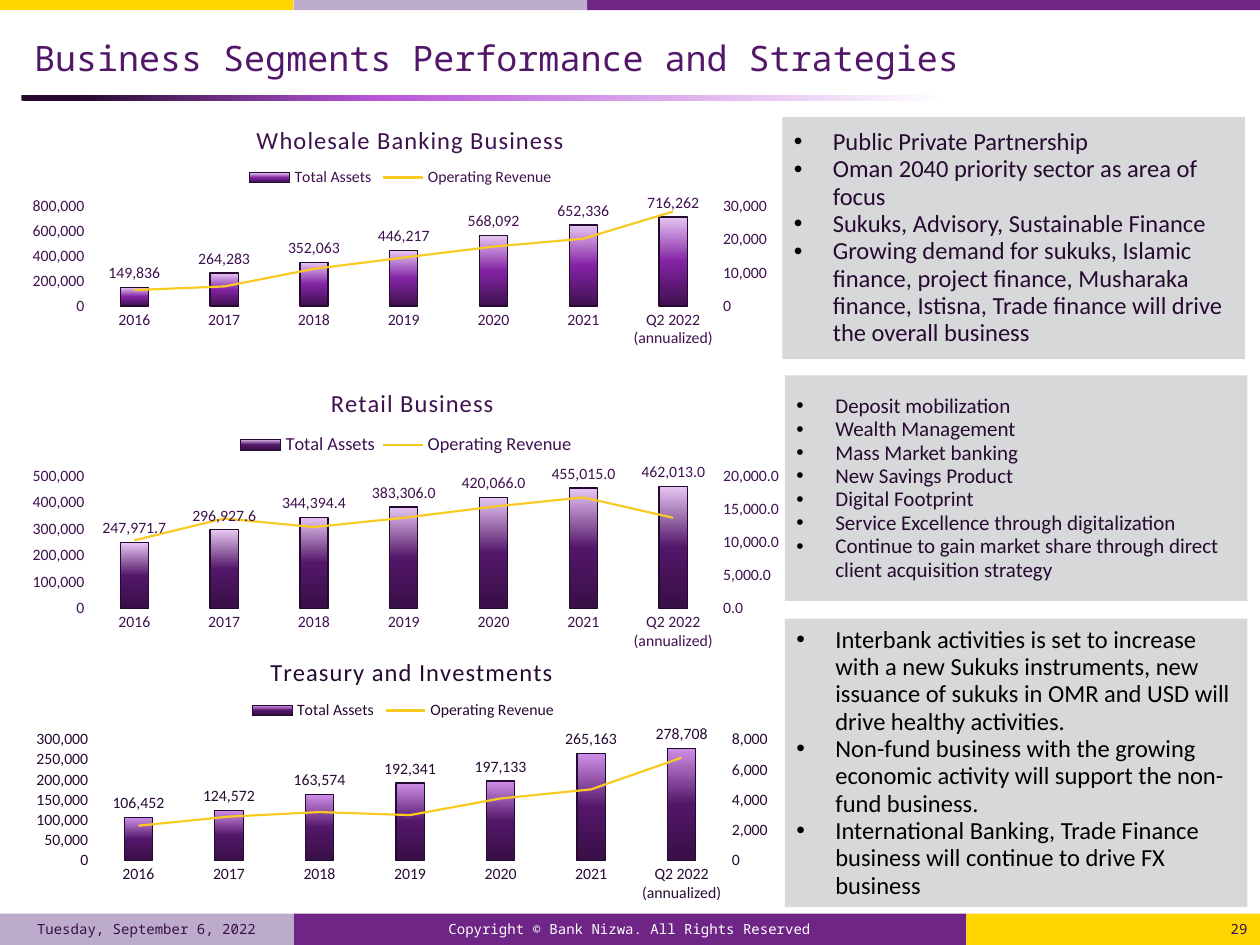
from copy import deepcopy
from dataclasses import dataclass

from pptx import Presentation
from pptx.chart.axis import ValueAxis
from pptx.chart.data import CategoryChartData
from pptx.dml.color import RGBColor as RGB
from pptx.enum.chart import XL_CHART_TYPE as CT, XL_LABEL_POSITION as LP
from pptx.enum.chart import XL_LEGEND_POSITION as LG, XL_MARKER_STYLE as MS, XL_TICK_MARK as TM
from pptx.enum.shapes import MSO_SHAPE as SH
from pptx.enum.text import MSO_ANCHOR as ANC, MSO_AUTO_SIZE as AUTO, PP_ALIGN as AL
from pptx.oxml import parse_xml
from pptx.oxml.ns import nsdecls, qn
from pptx.util import Inches, Pt


@dataclass
class Theme:
    purple: str = "6E2585"
    lilac: str = "BDABCC"
    yellow: str = "FFD600"
    title: str = "531769"
    deep: str = "380F46"
    ink: str = "260A30"
    plum: str = "3F114F"
    edge: str = "250A2F"
    line: str = "F9CA22"
    panel: str = "D7D8D9"
    grid: str = "FFFFFE"
    white: str = "FFFFFF"
    black: str = "000000"
    mono: str = "Noto Sans Mono"
    sans: str = "Calibri"
    title_size: float = 20
    chart_title_size: float = 14
    chart_size: float = 10
    label_size: float = 9
    footer_size: float = 8


T = Theme()


def set_gradient(fill, sp_pr, stops, angle):
    fill.gradient()
    fill.gradient_angle = angle
    gs_lst = sp_pr.find(".//" + qn("a:gsLst"))
    for gs in list(gs_lst):
        gs_lst.remove(gs)
    for pos, color in stops:
        gs_lst.append(parse_xml(f'<a:gs {nsdecls("a")} pos="{pos * 1000}"><a:srgbClr val="{color}"/></a:gs>'))


def set_layout(parent, index, frame, box, target=""):
    old = parent.find(qn("c:layout"))
    if old is not None:
        parent.remove(old)
    x, y, w, h = frame
    values = [(box[0] - x) / w, (box[1] - y) / h] + [v / d for v, d in zip(box[2:], (w, h))]
    modes = '<c:xMode val="edge"/><c:yMode val="edge"/>'
    sizes = "".join(f'<c:{k} val="{v:.4f}"/>' for k, v in zip("xywh", values))
    parent.insert(index, parse_xml(
        f'<c:layout {nsdecls("c")}><c:manualLayout>{target}{modes}{sizes}</c:manualLayout></c:layout>'))


prs = Presentation()
prs.slide_width, prs.slide_height = Inches(10), Inches(7.5)
s = prs.slides.add_slide(prs.slide_layouts[4])
ph = {p.placeholder_format.idx: p for p in s.placeholders}
ph[4].element.getparent().remove(ph[4].element)

bars = [
    (4.66, 0, 5.34, 0.08, T.purple, None, None, None),
    (2.33, 0, 2.33, 0.08, T.lilac, None, None, None),
    (0, 0, 2.33, 0.08, T.yellow, None, None, None),
    (0, 7.25, 2.33, 0.25, T.lilac, "Tuesday, September 6, 2022", T.deep, AL.CENTER),
    (2.33, 7.25, 5.34, 0.25, T.purple, "Copyright © Bank Nizwa. All Rights Reserved", T.white, AL.CENTER),
    (7.67, 7.25, 2.33, 0.25, T.yellow, "29", T.deep, AL.RIGHT),
]
for x, y, w, h, fill, text, color, align in bars:
    sp = s.shapes.add_shape(SH.RECTANGLE, Inches(x), Inches(y), Inches(w), Inches(h))
    sp.shadow.inherit = False
    sp.fill.solid()
    sp.fill.fore_color.rgb = RGB.from_string(fill)
    sp.line.fill.background()
    if text:
        tf = sp.text_frame
        tf.word_wrap = True
        tf.vertical_anchor = ANC.MIDDLE
        p = tf.paragraphs[0]
        p.alignment = align
        r = p.add_run()
        r.text = text
        r.font.name, r.font.size = T.mono, Pt(T.footer_size)
        r.font.color.rgb = RGB.from_string(color)

rule = s.shapes.add_shape(SH.ROUNDED_RECTANGLE, Inches(0.17), Inches(0.75), Inches(7.58), Inches(0.05))
rule.shadow.inherit = False
rule.line.fill.background()
set_gradient(rule.fill, rule.element.spPr, [(6, T.ink), (37, "B855DA"), (97, T.white)], 0)

title = ph[0]
title.left, title.top, title.width, title.height = Inches(0.17), Inches(0.17), Inches(8.17), Inches(0.58)
tf = title.text_frame
tf.auto_size = AUTO.NONE
tf.vertical_anchor = ANC.MIDDLE
p = tf.paragraphs[0]
p.alignment = AL.LEFT
r = p.add_run()
r.text = "Business Segments Performance and Strategies"
r.font.name, r.font.size = T.mono, Pt(T.title_size)
r.font.color.rgb = RGB.from_string(T.title)

panels = [
    (1, (6.21, 0.93, 3.67, 1.92), 14, T.ink, [
        "Public Private Partnership",
        "Oman 2040 priority sector as area of focus",
        "Sukuks, Advisory, Sustainable Finance",
        "Growing demand for sukuks, Islamic finance, project finance, Musharaka finance, "
        "Istisna, Trade finance will drive the overall business"]),
    (2, (6.23, 2.98, 3.67, 1.79), 12, T.ink, [
        "Deposit mobilization", "Wealth Management", "Mass Market banking",
        "New Savings Product", "Digital Footprint",
        "Service Excellence through digitalization",
        "Continue to gain market share through direct client acquisition strategy"]),
    (3, (6.23, 4.91, 3.67, 2.29), 14, T.black, [
        "Interbank activities is set to increase with a new Sukuks instruments, new issuance "
        "of sukuks in OMR and USD will drive healthy activities.",
        "Non-fund business with the growing economic activity will support the non-fund business.",
        "International Banking, Trade Finance business will continue to drive FX business"]),
]
for idx, box, size, color, items in panels:
    sp = ph[idx]
    sp.left, sp.top, sp.width, sp.height = [Inches(v) for v in box]
    sp.fill.solid()
    sp.fill.fore_color.rgb = RGB.from_string(T.panel)
    tf = sp.text_frame
    tf.word_wrap = True
    tf.auto_size = AUTO.NONE
    tf.vertical_anchor = ANC.MIDDLE
    tf.margin_left = tf.margin_right = Inches(0.09)
    tf.margin_top = tf.margin_bottom = Inches(0.05)
    for i, item in enumerate(items):
        p = tf.add_paragraph() if i else tf.paragraphs[0]
        p.line_spacing, p.space_before = 0.93, Pt(0)
        pPr = p._p.get_or_add_pPr()
        pPr.set("marL", str(Inches(0.31)))
        pPr.set("indent", str(-Inches(0.31)))
        for bullet in (f'buClr {nsdecls("a")}><a:srgbClr val="{T.black}"/></a:buClr>',
                       f'buFont {nsdecls("a")} typeface="Arial"/>', f'buChar {nsdecls("a")} char="•"/>'):
            pPr.append(parse_xml("<a:" + bullet))
        r = p.add_run()
        r.text = item
        r.font.name, r.font.size, r.font.bold = T.sans, Pt(size), False
        r.font.color.rgb = RGB.from_string(color)

years = ["2016", "2017", "2018", "2019", "2020", "2021", "Q2 2022 (annualized)"]
WHOLE, TENTH = "#,##0", "#,##0.0"
charts = [
    ("Retail Business", (0.13, 2.87, 6.17, 2.33), (2.59, 3.03), (1.85, 3.42, 2.75, 0.22),
     (0.71, 3.78, 4.99, 1.05), T.plum, 10.5, TENTH, ("E7C7F3", T.title, T.deep),
     (500000, 100000), (20000, 5000),
     [247971.7, 296927.6, 344394.4, 383306, 420066, 455015, 462013],
     [10300, 13600, 12300, 13700, 15400, 16800, 13700]),
    ("Wholesale Banking Business", (0.13, 0.78, 6.08, 2.02), (2, 0.94), (1.93, 1.31, 2.5, 0.2),
     (0.71, 1.64, 4.99, 0.79), T.plum, 9, WHOLE, ("E7C7F3", "8323A4", T.plum),
     (800000, 200000), (30000, 10000),
     [149836, 264283, 352063, 446217, 568092, 652336, 716262],
     [4800, 5900, 11200, 14600, 17900, 20300, 28500]),
    ("Treasury and Investments", (0.17, 5, 6.05, 2.2), (2.11, 5.16), (1.95, 5.54, 2.5, 0.2),
     (0.74, 5.87, 5.03, 0.96), T.ink, 9, WHOLE, ("D08FE7", T.title, T.deep),
     (300000, 50000), (8000, 2000),
     [106452, 124572, 163574, 192341, 197133, 265163, 278708],
     [2300, 2900, 3200, 3000, 4100, 4700, 6800]),
]
for (name, frame, title_at, legend_at, plot_at, ink, legend_size, fmt, shades,
     left_scale, right_scale, assets, revenue) in charts:
    data = CategoryChartData()
    data.categories = years
    data.add_series("Total Assets", assets)
    data.add_series("Operating Revenue", revenue)
    chart = s.shapes.add_chart(CT.COLUMN_CLUSTERED, *[Inches(v) for v in frame], data).chart
    chart.font.name, chart.font.size = T.sans, Pt(T.chart_size)
    chart.font.color.rgb = RGB.from_string(ink)

    r = chart.chart_title.text_frame.paragraphs[0].add_run()
    r.text = name
    r.font.name, r.font.size, r.font.bold = T.sans, Pt(T.chart_title_size), False
    r.font.color.rgb = RGB.from_string(ink)
    r._r.get_or_add_rPr().set("spc", "50")
    set_layout(chart.chart_title._element, 1, frame, title_at)

    chart.has_legend = True
    chart.legend.position = LG.TOP
    chart.legend.include_in_layout = False
    set_layout(chart.legend._element, 1, frame, legend_at)

    cat, val = chart.category_axis, chart.value_axis
    val.maximum_scale, val.major_unit = left_scale
    val.minimum_scale = 0
    val.tick_labels.number_format = WHOLE
    val.tick_labels.number_format_is_linked = False
    val.format.line.fill.background()
    val.major_gridlines.format.line.color.rgb = RGB.from_string(T.grid)
    val.major_gridlines.format.line.width = Pt(0.75)
    cat.format.line.color.rgb = RGB.from_string(T.grid)
    cat.format.line.width = Pt(0.75)
    for font, size in ((chart.legend.font, legend_size), (cat.tick_labels.font, T.label_size),
                       (val.tick_labels.font, T.label_size)):
        font.name, font.size = T.sans, Pt(size)
        font.color.rgb = RGB.from_string(ink)
    for axis in (cat, val):
        axis.major_tick_mark = axis.minor_tick_mark = TM.NONE

    plot = chart.plots[0]
    plot.vary_by_categories = False
    plot.gap_width, plot.overlap = 219, -27
    column = plot.series[0]
    set_gradient(column.format.fill, column._element.get_or_add_spPr(), zip((0, 50, 100), shades), 270)
    column.format.line.color.rgb = RGB.from_string(T.edge)
    column.format.line.width = Pt(0.75)
    labels = column.data_labels
    labels.show_value, labels.position = True, LP.OUTSIDE_END
    labels.number_format, labels.number_format_is_linked = fmt, False
    labels.font.name, labels.font.size = T.sans, Pt(T.label_size)
    labels.font.color.rgb = RGB.from_string(ink)

    ser = plot.series[1]._element
    for tag in ser.findall(qn("c:invertIfNegative")):
        ser.remove(tag)
    line_chart = parse_xml(
        f'<c:lineChart {nsdecls("c")}><c:grouping val="standard"/><c:varyColors val="0"/>'
        '<c:marker val="1"/><c:axId val="50010"/><c:axId val="50020"/></c:lineChart>')
    line_chart.insert(2, ser)
    plot._element.addnext(line_chart)
    right, hidden = deepcopy(val._element), deepcopy(cat._element)
    for axis, own, other in ((right, "50020", "50010"), (hidden, "50010", "50020")):
        axis.find(qn("c:axId")).set("val", own)
        axis.find(qn("c:crossAx")).set("val", other)
    val._element.addnext(right)
    right.addnext(hidden)
    right.find(qn("c:axPos")).set("val", "r")
    right.find(qn("c:crosses")).set("val", "max")
    right_axis = ValueAxis(right)
    right_axis.has_major_gridlines = False
    right_axis.maximum_scale, right_axis.major_unit = right_scale
    right_axis.tick_labels.number_format = fmt
    hidden.find(qn("c:delete")).set("val", "1")

    trend = chart.plots[1].series[0]
    trend.smooth = False
    trend.marker.style = MS.NONE
    trend.format.line.color.rgb = RGB.from_string(T.line)
    trend.format.line.width = Pt(1.25)
    set_layout(line_chart.getparent(), 0, frame, plot_at, '<c:layoutTarget val="inner"/>')

prs.save("out.pptx")
